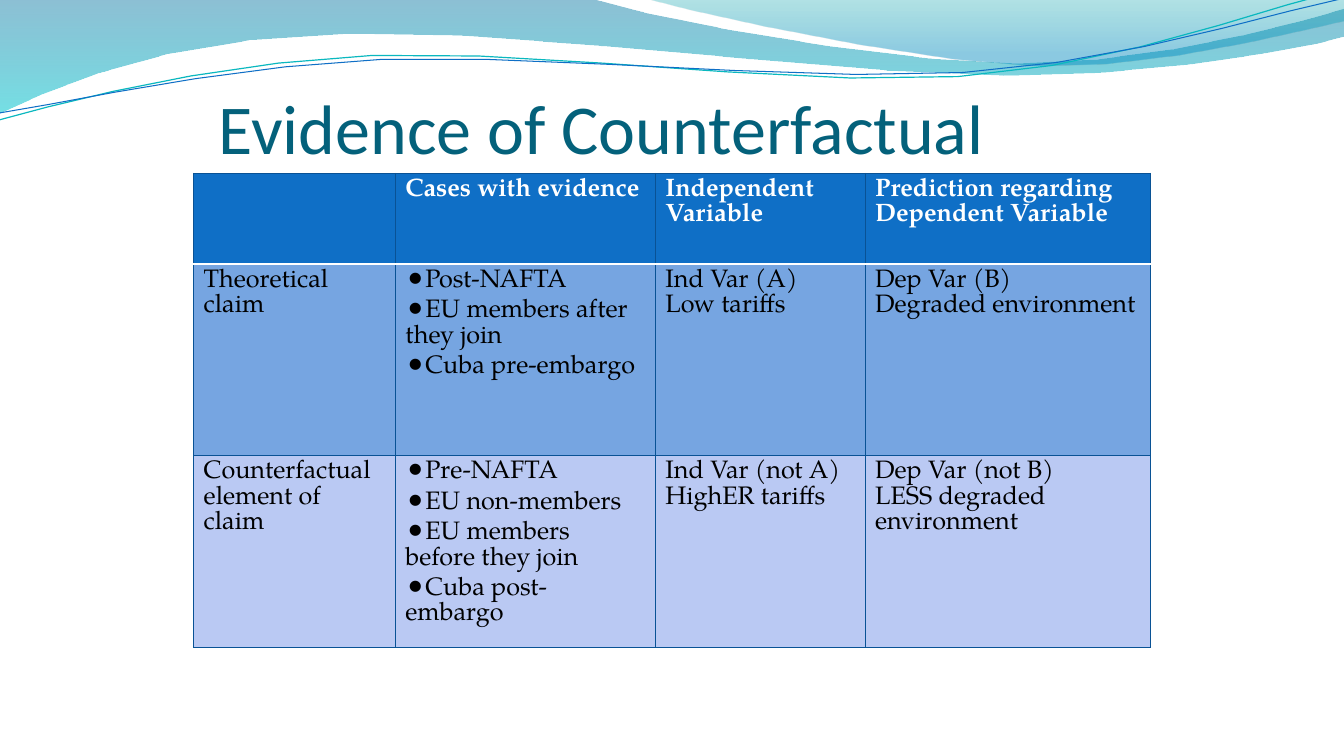
from lxml.etree import SubElement
from pptx import Presentation
from pptx.dml.color import RGBColor as RGB
from pptx.enum.text import MSO_ANCHOR as Anchor, PP_ALIGN as Align
from pptx.oxml.ns import qn
from pptx.util import Inches, Pt

WHITE = RGB(0xFF, 0xFF, 0xFF)
BLACK = RGB(0x00, 0x00, 0x00)
TITLE_TEAL = RGB(0x04, 0x61, 0x7B)
HEADER_BLUE = RGB(0x0F, 0x6F, 0xC6)
CLAIM_BLUE = RGB(0x76, 0xA5, 0xE1)
COUNTER_BLUE = RGB(0xBA, 0xC9, 0xF3)
GRID_BLUE = RGB(0x09, 0x52, 0x95)
LINE_TEAL = RGB(0x0A, 0xB8, 0xBF)

TITLE_FORMAT = {"name": "Calibri", "size": Pt(50), "bold": False}
CELL_FORMAT = {"name": "TeX Gyre Pagella", "size": Pt(18)}
CURVE_STEPS = 5

# Wave outlines in inches: a pair is a straight step, six numbers a Bezier curve
BANDS = [
    ([(0, 0), (5.87, -0.01),
      (6.34, 0.17, 8.85, 0.63, 10.11, 0.63),
      (11.38, 0.63, 12.78, 0.26, 13.33, 0.09), (13.35, 0.36),
      (13.11, 0.44, 11.6, 0.76, 9.94, 0.75),
      (8.29, 0.75, 5.09, 0.28, 3.43, 0.34),
      (1.72, 0.36, 0.61, 0.83, -0.01, 1.13)],
     [(0, RGB(0x00, 0x74, 0xA1), 45), (1, RGB(0x00, 0xC6, 0xCF), 55)]),
    ([(6.39, -0.01),
      (6.79, 0.11, 9.09, 0.62, 10.25, 0.65),
      (11.41, 0.69, 12.82, 0.32, 13.33, 0.21), (13.33, 0)],
     [(0, RGB(0x00, 0xA1, 0xA9), 30), (0.8, RGB(0x00, 0x8B, 0xBF), 45)]),
]
STRANDS = [
    ([(-0.01, 1.19),
      (0.64, 1.01, 2.11, 0.62, 3.69, 0.55),
      (5.27, 0.48, 7.9, 0.87, 9.5, 0.76),
      (11.1, 0.66, 12.52, 0.08, 13.31, -0.1)], LINE_TEAL, 0.85),
    ([(0, 1.12),
      (0.63, 1.03, 2.18, 0.66, 3.78, 0.59),
      (5.37, 0.53, 7.96, 0.82, 9.55, 0.72),
      (11.15, 0.62, 12.55, 0.14, 13.34, -0.02)], HEADER_BLUE, 0.75),
]

COLUMN_WIDTHS = [2, 2.58, 2.08, 2.83]
ROW_HEIGHTS = [0.9, 1.9, 1.9]
ROW_FILLS = [HEADER_BLUE, CLAIM_BLUE, COUNTER_BLUE]
CASES_COLUMN = 1
EVIDENCE = [
    [[], ["Cases with evidence"], ["Independent Variable"],
     ["Prediction regarding", "Dependent Variable"]],
    [["Theoretical claim"],
     ["Post-NAFTA", "EU members after they join", "Cuba pre-embargo"],
     ["Ind Var (A)", "Low tariffs"],
     ["Dep Var (B)", "Degraded environment"]],
    [["Counterfactual element of claim"],
     ["Pre-NAFTA", "EU non-members", "EU members before they join",
      "Cuba post-embargo"],
     ["Ind Var (not A)", "HighER tariffs"],
     ["Dep Var (not B)", "LESS degraded environment"]],
]


def apply_format(font, values, color):
    for attribute, value in values.items():
        setattr(font, attribute, value)
    font.color.rgb = color


def trace(outline):
    """Turn an outline into points, sampling each cubic curve evenly."""
    points = [outline[0]]
    for step in outline[1:]:
        if len(step) == 2:
            points.append(step)
            continue
        controls = [points[-1], step[:2], step[2:4], step[4:]]
        for i in range(1, CURVE_STEPS + 1):
            t = i / CURVE_STEPS
            weights = [(1 - t) ** 3, 3 * t * (1 - t) ** 2,
                       3 * t * t * (1 - t), t ** 3]
            points.append(tuple(sum(w * c[axis] for w, c in zip(weights, controls))
                                for axis in (0, 1)))
    return points


def add_outline(slide, outline, left, top, close):
    points = [(Inches(left + x), Inches(top + y)) for x, y in trace(outline)]
    builder = slide.shapes.build_freeform(*points[0], scale=1.0)
    builder.add_line_segments(points[1:], close=close)
    wave = builder.convert_to_shape()
    wave.shadow.inherit = False
    return wave


def add_waves(slide, left, top):
    # Translucent bands
    for outline, stops in BANDS:
        band = add_outline(slide, outline, left, top, close=True)
        band.line.fill.background()
        band.fill.gradient()
        band.fill.gradient_angle = 270
        for stop, (position, color, _) in zip(band.fill.gradient_stops, stops):
            stop.position = position
            stop.color.rgb = color
        for tint, (_, _, opacity) in zip(band.element.spPr.iter(qn("a:srgbClr")), stops):
            SubElement(tint, qn("a:alpha")).set("val", str(opacity * 1000))
    # Thin strands
    for outline, color, width in STRANDS:
        strand = add_outline(slide, outline, left, top, close=False)
        strand.fill.background()
        strand.line.color.rgb = color
        strand.line.width = Pt(width)


def add_title(slide, left, top, width, height):
    title = slide.shapes.title
    title.element.getparent().append(title.element)  # in front of the waves
    title.left, title.top = Inches(left), Inches(top)
    title.width, title.height = Inches(width), Inches(height)
    frame = title.text_frame
    frame_format = {"margin_left": 0, "margin_right": 0, "margin_top": Inches(0.05),
                    "margin_bottom": 0, "vertical_anchor": Anchor.BOTTOM,
                    "word_wrap": True}
    for attribute, value in frame_format.items():
        setattr(frame, attribute, value)
    frame.text = "Evidence of Counterfactual"
    heading = frame.paragraphs[0]
    heading.alignment = Align.LEFT
    apply_format(heading.runs[0].font, TITLE_FORMAT, TITLE_TEAL)


def add_border(cell, side, color, width):
    border = SubElement(cell._tc.get_or_add_tcPr(), qn(f"a:ln{side}"), w=str(Pt(width)))
    solid = SubElement(border, qn("a:solidFill"))
    SubElement(solid, qn("a:srgbClr"), val=str(color))


def add_bullet(entry):
    properties = entry._p.get_or_add_pPr()
    properties.set("marL", "0")
    properties.set("indent", "0")
    SubElement(properties, qn("a:buSzPct"), val="95000")
    SubElement(properties, qn("a:buFont"), typeface="OpenSymbol")
    SubElement(properties, qn("a:buChar"), char="⚫")


def fill_cell(cell, lines, row, bulleted):
    # The white rule lies between the header and the first body row
    for side in "LRTB":
        white_rule = (row, side) in ((0, "B"), (1, "T"))
        add_border(cell, side, *((WHITE, 2) if white_rule else (GRID_BLUE, 0.75)))
    cell.fill.solid()
    cell.fill.fore_color.rgb = ROW_FILLS[row]
    frame = cell.text_frame
    for i, line in enumerate(lines):
        entry = frame.add_paragraph() if i else frame.paragraphs[0]
        run = entry.add_run()
        run.text = line
        apply_format(run.font, {**CELL_FORMAT, "bold": row == 0},
                     WHITE if row == 0 else BLACK)
        if bulleted:
            if i:
                entry.space_before = Pt(3.6)
            add_bullet(entry)


def add_evidence_table(slide, left, top):
    table = slide.shapes.add_table(
        len(ROW_HEIGHTS), len(COLUMN_WIDTHS), Inches(left), Inches(top),
        Inches(sum(COLUMN_WIDTHS)), Inches(sum(ROW_HEIGHTS))).table
    table.horz_banding = False
    for column, width in zip(table.columns, COLUMN_WIDTHS):
        column.width = Inches(width)
    for table_row, height in zip(table.rows, ROW_HEIGHTS):
        table_row.height = Inches(height)
    for r, entries in enumerate(EVIDENCE):
        for c, lines in enumerate(entries):
            fill_cell(table.cell(r, c), lines, r, r > 0 and c == CASES_COLUMN)


def main():
    deck = Presentation()
    deck.slide_width, deck.slide_height = Inches(13.33), Inches(7.5)
    slide = deck.slides.add_slide(deck.slide_layouts.get_by_name("Title Only"))
    add_waves(slide, 0, 0)
    add_title(slide, 2.17, 0.42, 9, 1.25)
    add_evidence_table(slide, 1.92, 1.72)
    deck.save("out.pptx")


if __name__ == "__main__":
    main()
